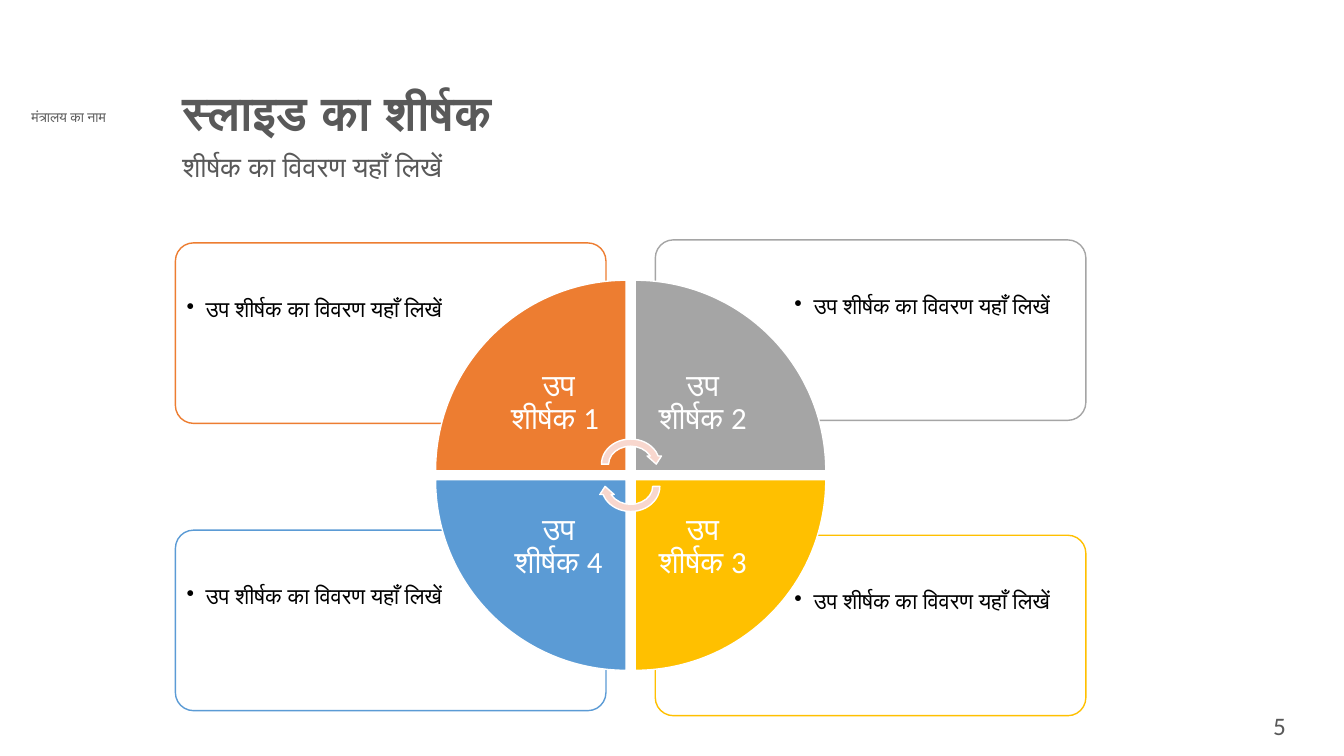
from dataclasses import dataclass

from lxml import etree
from pptx import Presentation
from pptx.dml.color import RGBColor
from pptx.enum.shapes import MSO_SHAPE
from pptx.enum.text import MSO_ANCHOR, PP_ALIGN
from pptx.oxml.ns import qn
from pptx.util import Emu, Pt

ROUNDED = MSO_SHAPE.ROUNDED_RECTANGLE
WEDGE = MSO_SHAPE.PIE_WEDGE
CIRCULAR_ARROW = MSO_SHAPE.CIRCULAR_ARROW
TOP, MIDDLE = MSO_ANCHOR.TOP, MSO_ANCHOR.MIDDLE
LEFT, CENTER = PP_ALIGN.LEFT, PP_ALIGN.CENTER
EMU_PER_PX = 9144


@dataclass(frozen=True)
class Theme:
    font: str = "Calibri"
    ministry_font: str = "Lato"
    white: str = "FFFFFF"
    black: str = "000000"
    gray: str = "595959"
    arrow: str = "F8D7CE"
    quadrants: tuple = ("ED7D31", "A5A5A5", "FFC000", "5B9BD5")
    ministry_size: int = 10
    detail_size: int = 16
    number_size: int = 18
    subtitle_size: int = 20
    label_size: int = 22
    title_size: int = 34


THEME = Theme()
GRID = ((0, 0), (1, 0), (1, 1), (0, 1))
LABELS = ("उप शीर्षक 1 ", "उप शीर्षक 2", "उप शीर्षक 3", "उप शीर्षक 4")
CARD_TOPS = (3, 0, 293, 288)
DETAIL = "उप शीर्षक का विवरण यहाँ लिखें"


def px(*lengths):
    return [Emu(length * EMU_PER_PX) for length in lengths]


def add_bullet(paragraph, indent):
    properties = paragraph._p.get_or_add_pPr()
    properties.set("marL", str(indent * EMU_PER_PX))
    properties.set("indent", str(-indent * EMU_PER_PX))
    etree.SubElement(properties, qn("a:buChar")).set("char", "•")


def add_text(page, box, text, size, color, font=THEME.font, align=LEFT, anchor=TOP,
             inset=None, spacing=None, bold=False, bullet_indent=None):
    frame = page.shapes.add_textbox(*px(*box)).text_frame
    frame.word_wrap = True
    frame.vertical_anchor = anchor
    if inset is not None:
        (margin,) = px(inset)
        frame.margin_left = frame.margin_right = margin
        frame.margin_top = frame.margin_bottom = margin
    paragraph = frame.paragraphs[0]
    paragraph.text = text
    paragraph.alignment = align
    if spacing is not None:
        paragraph.line_spacing = spacing
    if bullet_indent is not None:
        add_bullet(paragraph, bullet_indent)
    paragraph.font.name = font
    paragraph.font.size = Pt(size)
    paragraph.font.bold = bold
    paragraph.font.color.rgb = RGBColor.from_string(color)


def add_outlined(page, kind, box, fill, line, rotation=0):
    shape = page.shapes.add_shape(kind, *px(*box))
    shape.shadow.inherit = False
    shape.rotation = rotation
    shape.fill.solid()
    shape.fill.fore_color.rgb = RGBColor.from_string(fill)
    shape.line.color.rgb = RGBColor.from_string(line)
    shape.line.width = Pt(1)
    return shape


def add_header(page, box):
    left, top, width, height = box
    add_text(page, (3, top + 19, 130, 27), "मंत्रालय का नाम", THEME.ministry_size,
             THEME.gray, font=THEME.ministry_font, align=CENTER)
    add_text(page, (left, top, width, 55), "स्लाइड का शीर्षक", THEME.title_size,
             THEME.gray, spacing=0.9, bold=True)
    add_text(page, (left, top + 63, width, height - 63), "शीर्षक का विवरण यहाँ लिखें",
             THEME.subtitle_size, THEME.gray, spacing=0.9)


def add_card(page, box, color, column, row):
    left, top, width, height = box
    card = add_outlined(page, ROUNDED, box, THEME.white, color)
    card.adjustments[0] = 0.1
    white = card.fill._xPr.find(qn("a:solidFill"))[0]
    etree.SubElement(white, qn("a:alpha")).set("val", "90000")
    text_box = (left + (131 if column else 4), top + (48 if row else 4), 291, 126)
    add_text(page, text_box, DETAIL, THEME.detail_size, THEME.black, inset=7,
             anchor=TOP if row else MIDDLE, spacing=0.9, bullet_indent=19)


def add_wedge(page, box, color, label, column, row, rotation):
    left, top, width, height = box
    side = 134
    add_outlined(page, WEDGE, box, color, THEME.white, rotation)
    label_box = (left + (1 - column) * (width - side),
                 top + (1 - row) * (height - side), side, side)
    add_text(page, label_box, label, THEME.label_size, THEME.white, align=CENTER,
             anchor=MIDDLE, inset=17, spacing=0.9)


def add_cycle_matrix(page, box):
    left, top, width, height = box
    card_width, card_height = 427, 179
    wedge_side, wedge_step = 189, 198
    wheel_left = left + (width - wedge_side - wedge_step) // 2
    wheel_top = top + 40
    quadrants = list(zip(GRID, THEME.quadrants, LABELS, CARD_TOPS))
    for (column, row), color, label, card_top in quadrants:
        card_box = (left + column * (width - card_width), top + card_top,
                    card_width, card_height)
        add_card(page, card_box, color, column, row)
    for turn, ((column, row), color, label, card_top) in enumerate(quadrants):
        wedge_box = (wheel_left + column * wedge_step, wheel_top + row * wedge_step,
                     wedge_side, wedge_side)
        add_wedge(page, wedge_box, color, label, column, row, turn * 90)
    for half in range(2):
        arrow_box = (left + (width - 65) // 2, top + 194 + half * 22, 65, 57)
        add_outlined(page, CIRCULAR_ARROW, arrow_box, THEME.arrow, THEME.white,
                     half * 180)


def add_page_number(page, box):
    add_text(page, box, "5", THEME.number_size, THEME.gray, align=CENTER)


def main():
    deck = Presentation()
    deck.slide_width, deck.slide_height = px(1333, 750)
    page = deck.slides.add_slide(deck.slide_layouts[6])
    add_header(page, (171, 84, 961, 126))
    add_cycle_matrix(page, (174, 238, 903, 472))
    add_page_number(page, (1210, 700, 118, 45))
    deck.save("out.pptx")


if __name__ == "__main__":
    main()
